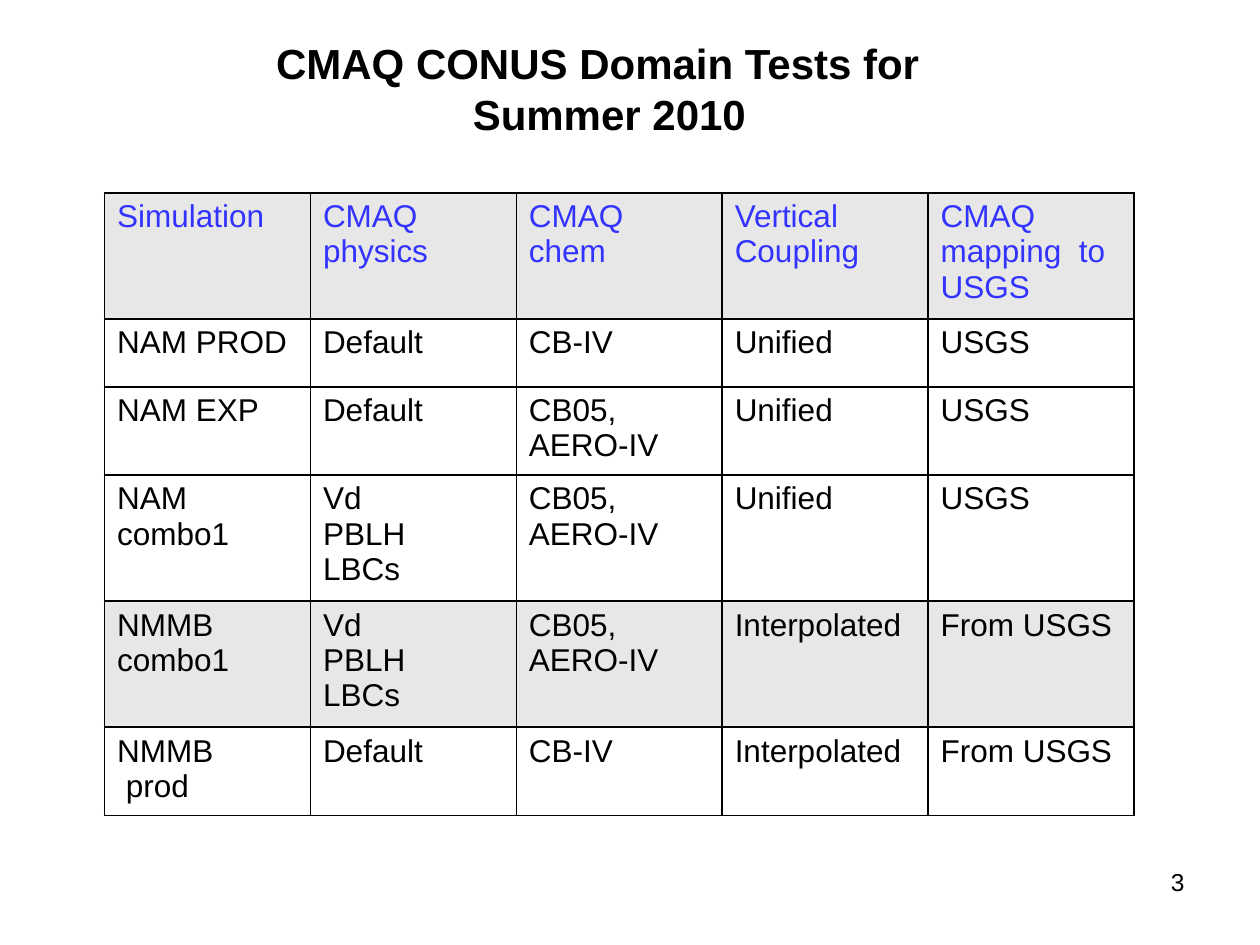
from dataclasses import dataclass

from lxml import etree
from pptx import Presentation
from pptx.dml.color import RGBColor
from pptx.enum.text import PP_ALIGN
from pptx.oxml.ns import qn
from pptx.util import Inches, Pt

LEFT, CENTER, RIGHT = PP_ALIGN.LEFT, PP_ALIGN.CENTER, PP_ALIGN.RIGHT


@dataclass(frozen=True)
class Theme:
    font: str = "Arial"
    ink: str = "000000"
    head: str = "3333FF"
    shade: str = "E7E7E7"
    plain: str = "FFFFFF"
    title: int = 24
    body: int = 18
    page: int = 14
    rule: int = 1


class Deck:
    def __init__(self, theme, slide):
        self.theme = theme
        self.slide = slide

    def label(self, frame, text, size, color, bold=False, align=LEFT):
        frame.word_wrap = True
        frame.text = text
        style = {"name": self.theme.font, "size": Pt(size), "bold": bold}
        for para in frame.paragraphs:
            para.alignment = align
            for run in para.runs:
                for key, value in style.items():
                    setattr(run.font, key, value)
                run.font.color.rgb = RGBColor.from_string(color)

    def text(self, box, text, size, **style):
        shape = self.slide.shapes.add_textbox(*map(Inches, box))
        self.label(shape.text_frame, text, size, self.theme.ink, **style)

    def border(self, cell):
        props = cell._tc.get_or_add_tcPr()
        for index, side in enumerate(("lnL", "lnR", "lnT", "lnB")):
            line = etree.Element(qn(f"a:{side}"), w=str(Pt(self.theme.rule)))
            fill = etree.SubElement(line, qn("a:solidFill"))
            etree.SubElement(fill, qn("a:srgbClr"), val=self.theme.ink)
            props.insert(index, line)

    def table(self, box, rows, heights, shaded):
        theme = self.theme
        frame = self.slide.shapes.add_table(
            len(rows), len(rows[0]), *map(Inches, box))
        table = frame.table
        for row, height in zip(table.rows, heights):
            row.height = Inches(height)
        for r, row in enumerate(rows):
            for c, text in enumerate(row):
                cell = table.cell(r, c)
                color = theme.head if r == 0 else theme.ink
                self.label(cell.text_frame, text, theme.body, color)
                cell.fill.solid()
                back = theme.shade if r in shaded else theme.plain
                cell.fill.fore_color.rgb = RGBColor.from_string(back)
                self.border(cell)


def main():
    show = Presentation()
    show.slide_width, show.slide_height = Inches(10), Inches(7.5)
    theme = Theme()
    deck = Deck(theme, show.slides.add_slide(show.slide_layouts[6]))

    # Page number and title
    deck.text((7.17, 6.83, 2.33, 0.52), "3", theme.page, align=RIGHT)
    deck.text((1.75, 0.25, 6.08, 0.91),
              "CMAQ CONUS Domain Tests for \n Summer 2010",
              theme.title, bold=True, align=CENTER)

    # Simulation table
    combo = "Vd\nPBLH\nLBCs"
    aero = "CB05, AERO-IV"
    rows = [
        ("Simulation", "CMAQ physics", "CMAQ\nchem", "Vertical Coupling",
         "CMAQ mapping  to USGS"),
        ("NAM PROD", "Default", "CB-IV", "Unified", "USGS"),
        ("NAM EXP", "Default", aero, "Unified", "USGS"),
        ("NAM combo1", combo, aero, "Unified", "USGS"),
        ("NMMB combo1", combo, aero, "Interpolated", "From USGS"),
        ("NMMB\n prod", "Default", "CB-IV", "Interpolated", "From USGS"),
    ]
    deck.table((0.83, 1.53, 8.17, 4.94), rows,
               heights=(1, 0.54, 0.7, 1, 1, 0.7), shaded=(0, 4))

    show.save("out.pptx")


if __name__ == "__main__":
    main()
